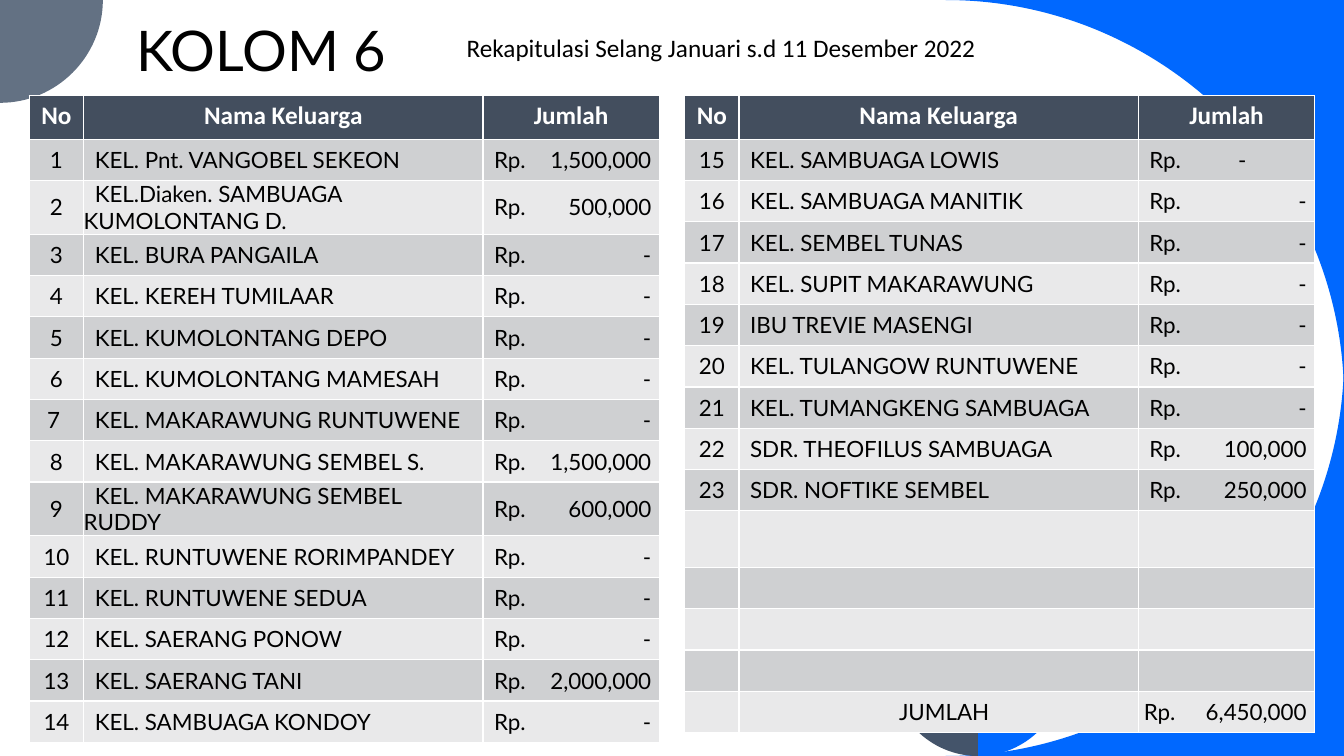
from lxml.etree import SubElement as add_sub
from pptx import Presentation
from pptx.dml.color import RGBColor
from pptx.enum.text import MSO_ANCHOR as Anchor, MSO_AUTO_SIZE as Fit, PP_ALIGN as Align
from pptx.oxml.ns import qn
from pptx.util import Inches, Pt

WIDE, HIGH = 13.33, 7.5
BLUE, SLATE, NAVY = "0068FF", "637183", "44546A"
HEAD, DARK, LIGHT = "434E5E", "CFD0D2", "E9E9EA"
COLS = (0.54, 3.96, 1.75)
HEAD_H, ROW_H, TALL = 0.43, 0.41, 0.56
INDENT, STOP = 0.11, 1.67
UNIT = 1000  # outline steps per inch
BEND = 0.55  # handle length of a quarter circle

LEFT = [
    ("1", "KEL. Pnt. VANGOBEL SEKEON", "1,500,000"),
    ("2", "KEL.Diaken. SAMBUAGA KUMOLONTANG D.", "500,000"),
    ("3", "KEL. BURA PANGAILA", "-"),
    ("4", "KEL. KEREH TUMILAAR", "-"),
    ("5", "KEL. KUMOLONTANG DEPO", "-"),
    ("6", "KEL. KUMOLONTANG MAMESAH", "-"),
    ("7 ", "KEL. MAKARAWUNG RUNTUWENE", "-"),
    ("8", "KEL. MAKARAWUNG SEMBEL S.", "1,500,000"),
    ("9", "KEL. MAKARAWUNG SEMBEL RUDDY", "600,000"),
    ("10", "KEL. RUNTUWENE RORIMPANDEY", "-"),
    ("11", "KEL. RUNTUWENE SEDUA", "-"),
    ("12", "KEL. SAERANG PONOW", "-"),
    ("13", "KEL. SAERANG TANI", "2,000,000"),
    ("14", "KEL. SAMBUAGA KONDOY", "-"),
]
RIGHT = [
    ("15", "KEL. SAMBUAGA LOWIS", "-"),
    ("16", "KEL. SAMBUAGA MANITIK", "-"),
    ("17", "KEL. SEMBEL TUNAS", "-"),
    ("18", "KEL. SUPIT MAKARAWUNG", "-"),
    ("19", "IBU TREVIE MASENGI", "-"),
    ("20", "KEL. TULANGOW RUNTUWENE", "-"),
    ("21", "KEL. TUMANGKENG SAMBUAGA", "-"),
    ("22", "SDR. THEOFILUS SAMBUAGA", "100,000"),
    ("23", "SDR. NOFTIKE SEMBEL", "250,000"),
] + [("", "", "")] * 4 + [("", "JUMLAH", "6,450,000")]


def color(code):
    return RGBColor.from_string(code)


def write(frame, text, size=16, font="Lato", ink="000000", bold=False,
          align=Align.LEFT, indent=0, tab=None):
    """Write one paragraph; tab is a pair of place and alignment."""
    para = frame.paragraphs[0]
    para.alignment = align
    props = para._p.get_or_add_pPr()
    if indent:
        props.set("marL", "0")
        props.set("indent", str(Inches(indent)))
    if tab:
        stops = add_sub(props, qn("a:tabLst"))
        add_sub(stops, qn("a:tab"), pos=str(Inches(tab[0])), algn=tab[1])
    run = para.add_run()
    run.text = text
    run.font.size, run.font.name, run.font.bold = Pt(size), font, bold
    run.font.color.rgb = color(ink)


def outline(slide, fill, start, *steps):
    """Draw steps of (x, y), or (x, y, corner) for a quarter circle."""
    ends = [(x * UNIT, y * UNIT) for x, y, *_ in (start,) + steps]
    pen = slide.shapes.build_freeform(*ends[0], scale=Inches(1) / UNIT)
    pen.add_line_segments(ends[1:], close=True)
    form = pen.convert_to_shape()
    form.shadow.inherit = False
    form.fill.solid()
    form.fill.fore_color.rgb = color(fill)
    form.line.fill.background()
    # Bend the quarter circles toward their corners
    low = [min(axis) for axis in zip(*ends)]
    lines = list(form._element.iter(qn("a:lnTo")))
    for line, step, first, last in zip(lines, steps, ends, ends[1:]):
        if len(step) == 3:
            line.tag = qn("a:cubicBezTo")
            for i, end in enumerate((first, last)):
                x, y = (round(e + BEND * (c * UNIT - e) - m)
                        for e, c, m in zip(end, step[2], low))
                point = add_sub(line, qn("a:pt"), x=str(x), y=str(y))
                line.insert(i, point)


def decor(slide, wide, high):
    # Blue corners outside two large quarter circles
    big = 3.95
    mid = wide - big
    for edge, side in ((0, 1), (high, -1)):
        corner = (wide, edge)
        outline(slide, BLUE, corner, (mid, edge),
                (wide, edge + side * big, corner))
    # Grey quarter disc at top left
    disc = 1.02
    outline(slide, SLATE, (0, 0), (disc, 0), (0, disc, (disc, disc)))
    # Pair of leaves at the bottom edge, mirrored about the stem
    stem, r, base = 9.7, 0.86, 0.53
    for side, fill in ((1, BLUE), (-1, NAVY)):
        tip = stem + side * r
        outline(slide, fill, (tip, high - base - r), (tip, high - r),
                (stem, high, (tip, high)), (stem, high - base),
                (tip, high - base - r, (stem, high - base - r)))


def heading(slide, left, top, wide, high):
    # Title
    title = slide.shapes.title
    title.left, title.top = Inches(left), Inches(top)
    title.width, title.height = Inches(wide), Inches(high)
    frame = title.text_frame
    frame.auto_size, frame.vertical_anchor = Fit.NONE, Anchor.TOP
    write(frame, "KOLOM 6", size=40)
    # Period covered
    note = slide.shapes.add_textbox(Inches(left + 3.28), Inches(top + 0.17),
                                    Inches(WIDE / 2), Inches(0.4))
    note.text_frame.word_wrap = True
    write(note.text_frame, "Rekapitulasi Selang Januari s.d 11 Desember 2022",
          size=18, font="Calibri")


def paint(cell, fill):
    cell.fill.solid()
    cell.fill.fore_color.rgb = color(fill)


def ledger(slide, rows, left, top, wide):
    high = HEAD_H + ROW_H * len(rows)
    grid = slide.shapes.add_table(len(rows) + 1, len(COLS), Inches(left),
                                  Inches(top), Inches(wide), Inches(high)).table
    for col, size in zip(grid.columns, COLS):
        col.width = Inches(wide * size / sum(COLS))
    # Header row
    grid.rows[0].height = Inches(HEAD_H)
    for cell, text in zip(grid.rows[0].cells, ("No", "Nama Keluarga", "Jumlah")):
        paint(cell, HEAD)
        write(cell.text_frame, text, size=18, font="Calibri", ink="FFFFFF",
              bold=True, align=Align.CENTER)
    # Family rows
    for i, (no, name, due) in enumerate(rows):
        line = grid.rows[i + 1]
        gap = not name and rows[i - 1][1]
        line.height = Inches(TALL if gap else ROW_H)
        total = name == "JUMLAH"
        pad = INDENT / 2 if total else INDENT
        stop = (1.03 - pad, "ctr") if no == "15" else (STOP - pad, "r")
        parts = (
            (no, 0, dict(align=Align.CENTER)),
            (name, 0, dict(align=Align.CENTER if total else Align.LEFT,
                           indent=INDENT)),
            (due and f"Rp.\t{due}", pad, dict(tab=stop)),
        )
        for cell, (text, inset, style) in zip(line.cells, parts):
            paint(cell, LIGHT if i % 2 else DARK)
            if text:
                cell.vertical_anchor = Anchor.MIDDLE
                cell.margin_left = Inches(inset)
                cell.margin_right = cell.margin_top = cell.margin_bottom = 0
                write(cell.text_frame, text, **style)


def main():
    deck = Presentation()
    deck.slide_width, deck.slide_height = Inches(WIDE), Inches(HIGH)
    slide = deck.slides.add_slide(deck.slide_layouts[5])
    decor(slide, WIDE, HIGH)
    heading(slide, 1.25, 0.1, 3.68, 0.77)
    for rows, left in ((LEFT, 0.29), (RIGHT, 6.79)):
        ledger(slide, rows, left, 0.95, 6.25)
    deck.save("out.pptx")


if __name__ == "__main__":
    main()
